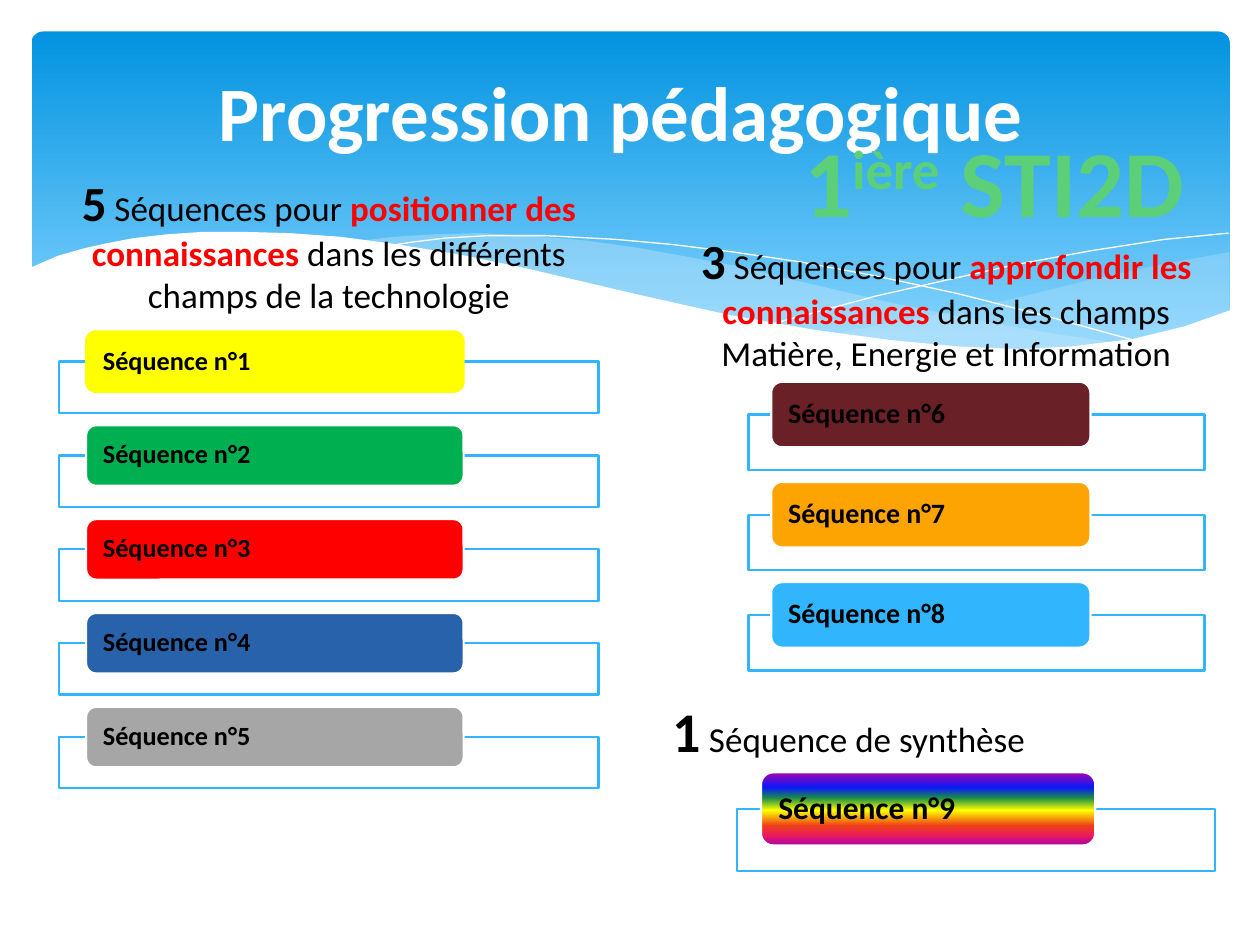
"""Build the teaching progression slide with its wave header and sequence lists."""
import lxml.etree
import pptx
import pptx.dml.color
import pptx.enum.shapes
import pptx.enum.text
import pptx.oxml.ns
import pptx.util

Inches, Pt, qn = pptx.util.Inches, pptx.util.Pt, pptx.oxml.ns.qn
Shapes = pptx.enum.shapes.MSO_SHAPE
Align, Anchor = pptx.enum.text.PP_ALIGN, pptx.enum.text.MSO_ANCHOR

BLACK, WHITE, RED, GREEN = "000000", "FFFFFF", "FF0000", "5BD078"
SKY, MIST = "31B6FD", "C6E7FC"
HEADER_STOPS = [(0, "0293E0"), (90, "83D3FE")]
RAINBOW_STOPS = [(0, "A603AB"), (21, "0819FB"), (35, "1A8D48"), (52, "FFFF00"),
                 (73, "EE3F17"), (88, "E81766"), (100, "A603AB")]
RIGHT_WAVE = [
    (9.76, 2), (9.21, 2.1), (8.61, 2.23), (8.05, 2.37), (7.53, 2.48), (6.61, 2.65), (7.05, 2.71),
    (7.45, 2.75), (7.81, 2.77), (8.14, 2.78), (8.54, 2.76), (8.97, 2.7), (9.35, 2.62), (9.76, 2.47)]
LONG_WAVE = [
    (8.93, 2.73), (8.37, 2.65), (7.75, 2.54), (7.06, 2.4), (6.29, 2.22), (5.84, 2.11), (5.41, 2.03),
    (5.02, 1.96), (4.65, 1.91), (4.2, 1.87), (3.8, 1.85), (3.44, 1.86), (3.13, 1.88), (2.86, 1.91),
    (3.23, 1.96), (3.62, 2.03), (4.04, 2.11), (4.49, 2.22), (5.3, 2.4), (6.01, 2.55), (6.5, 2.64),
    (6.95, 2.7), (7.36, 2.75), (7.73, 2.77), (8.07, 2.78), (8.38, 2.78), (8.67, 2.76)]
FALLING_LINE = [
    (3.09, 1.95), (3.28, 1.92), (3.53, 1.89), (3.87, 1.87), (4.33, 1.87), (4.89, 1.9), (5.33, 1.94),
    (5.82, 2), (6.36, 2.08), (6.95, 2.19), (7.6, 2.33), (8.31, 2.51), (9.07, 2.72)]
RISING_LINE = [
    (6.13, 2.57), (6.95, 2.35), (7.48, 2.23), (8.06, 2.1), (8.66, 1.99), (9.24, 1.9), (9.75, 1.85)]
WHITE_WAVE = [
    (9.77, 2.46), (9.4, 2.59), (8.99, 2.69), (8.5, 2.75), (8.09, 2.77), (7.61, 2.75), (7.08, 2.7),
    (6.48, 2.62), (5.79, 2.5), (5.03, 2.33), (4.18, 2.13), (3.65, 2.02), (3.16, 1.94), (2.71, 1.88),
    (2.3, 1.85), (1.93, 1.84), (1.61, 1.84), (1.32, 1.86), (1.06, 1.89), (0.85, 1.93), (0.67, 1.97),
    (0.46, 2.03), (0.23, 2.13), (0.23, 3.29), (9.77, 3.29)]


def color(value):
    """Turn a hex string into a colour."""
    return pptx.dml.color.RGBColor.from_string(value)


def fill_solid(shape, value, opacity=100):
    """Fill a shape with one colour at an opacity in percent."""
    shape.fill.solid()
    shape.fill.fore_color.rgb = color(value)
    element = shape._element.spPr.find(".//" + qn("a:srgbClr"))
    lxml.etree.SubElement(element, qn("a:alpha"), val=str(opacity * 1000))


def fill_gradient(shape, stops):
    """Fill a shape from top to bottom with (percent, colour) stops."""
    shape.fill.gradient()
    shape.fill.gradient_angle = 270
    stop_list = shape._element.spPr.find(".//" + qn("a:gsLst"))
    for child in list(stop_list):
        stop_list.remove(child)
    for percent, value in stops:
        stop = lxml.etree.SubElement(stop_list, qn("a:gs"), pos=str(percent * 1000))
        lxml.etree.SubElement(stop, qn("a:srgbClr"), val=value)


def set_line(shape, value, width):
    """Outline a shape with a colour and a width in points."""
    shape.line.color.rgb = color(value)
    shape.line.width = Pt(width)


def set_font(font, size, value, bold):
    """Set the typeface, size, colour and weight of a font."""
    font.name, font.size, font.bold = "Calibri", Pt(size), bold
    font.color.rgb = color(value)


def add_box(slide, kind, *bounds):
    """Add a preset shape without a shadow."""
    shape = slide.shapes.add_shape(kind, *map(Inches, bounds))
    shape.shadow.inherit = False
    return shape


def add_outline(slide, points, closed):
    """Add a freeform through points given in inches."""
    corners = [(Inches(x), Inches(y)) for x, y in points]
    builder = slide.shapes.build_freeform(*corners[0])
    builder.add_line_segments(corners[1:], close=closed)
    shape = builder.convert_to_shape()
    shape.shadow.inherit = False
    return shape


def add_wave(slide, points, value, opacity):
    """Add a filled wave without an outline."""
    wave = add_outline(slide, points, True)
    fill_solid(wave, value, opacity)
    wave.line.fill.background()


def add_header(slide):
    """Draw the gradient panel and its waves."""
    panel = add_box(slide, Shapes.ROUNDED_RECTANGLE, 0.25, 0.25, 9.51, 2.7)
    panel.adjustments[0] = 0.034
    fill_gradient(panel, HEADER_STOPS)
    panel.line.fill.background()
    add_wave(slide, RIGHT_WAVE, MIST, 29)
    add_wave(slide, LONG_WAVE, MIST, 40)
    for points in (FALLING_LINE, RISING_LINE):
        curve = add_outline(slide, points, False)
        curve.fill.background()
        set_line(curve, WHITE, 0)
    add_wave(slide, WHITE_WAVE, WHITE, 100)


def add_title(slide, text):
    """Format the slide title and bring it in front of the header."""
    title = slide.shapes.title
    slide.shapes._spTree.append(title._element)
    title.left, title.top, title.width, title.height = map(Inches, (0.5, 0.37, 9, 1.02))
    title.text_frame.text = text
    title.text_frame.vertical_anchor = Anchor.MIDDLE
    paragraph = title.text_frame.paragraphs[0]
    paragraph.alignment = Align.CENTER
    set_font(paragraph.font, 44, WHITE, True)


def add_text(slide, bounds, runs, alignment=Align.CENTER, wrap=True):
    """Add a text box from (text, size, colour, bold) runs and return its runs."""
    frame = slide.shapes.add_textbox(*map(Inches, bounds)).text_frame
    frame.word_wrap = wrap
    frame.auto_size = pptx.enum.text.MSO_AUTO_SIZE.SHAPE_TO_FIT_TEXT
    paragraph = frame.paragraphs[0]
    paragraph.alignment = alignment
    for text, *style in runs:
        run = paragraph.add_run()
        run.text = text
        set_font(run.font, *style)
    return paragraph.runs


def add_goal(slide, left, top, count, goal, scope):
    """Add a centred heading with its count and its goal in red."""
    add_text(slide, (left, top, 4.72, 1.25), [
        (count, 28, BLACK, True), (" Séquences pour ", 20, BLACK, False),
        (goal, 20, RED, True), (scope, 20, BLACK, False)])


def add_sequence(slide, number, left, top, width, height, size, stops, border=WHITE):
    """Add an outlined bar with a labelled tab over its upper edge."""
    bar = add_box(slide, Shapes.RECTANGLE, left, top + height / 2, width, 0.85 * height)
    fill_solid(bar, WHITE, 90)
    set_line(bar, SKY, 1.25)
    tab = add_box(slide, Shapes.ROUNDED_RECTANGLE, left + 0.05 * width, top, 0.7 * width, height)
    if isinstance(stops, str):
        fill_solid(tab, stops)
    else:
        fill_gradient(tab, stops)
    set_line(tab, border, 1.25)
    frame = tab.text_frame
    frame.text = f"Séquence n°{number}"
    frame.vertical_anchor = Anchor.MIDDLE
    frame.margin_left, frame.margin_top, frame.margin_bottom = Inches(0.11), 0, 0
    paragraph = frame.paragraphs[0]
    paragraph.alignment = Align.LEFT
    paragraph.line_spacing = 0.9
    set_font(paragraph.font, size, BLACK, True)


def main():
    """Build and save the slide."""
    presentation = pptx.Presentation()
    presentation.slide_width, presentation.slide_height = Inches(10), Inches(7.5)
    slide = presentation.slides.add_slide(presentation.slide_layouts[5])
    add_header(slide)
    add_title(slide, "Progression pédagogique ")
    add_goal(slide, 0.25, 1.32, "5", "positionner des connaissances ",
             "dans les différents champs de la technologie")
    for index, value in enumerate(("FFFF00", "00B050", RED, "2862AA", "A6A6A6")):
        add_sequence(slide, index + 1, 0.47, 2.63 + 0.745 * index, 4.28, 0.48, 15,
                     value, WHITE if index else value)
    add_goal(slide, 5.15, 1.78, "3", "approfondir les connaissances ",
             "dans les champs Matière, Energie et Information")
    for index, value in enumerate(("6A2027", "FEA402", SKY)):
        add_sequence(slide, index + 6, 5.94, 3.03 + 0.795 * index, 3.62, 0.52, 16, value)
    add_text(slide, (5.24, 5.48, 4.41, 0.64), [
        ("1", 32, BLACK, True), (" Séquence de synthèse", 20, BLACK, False)], Align.LEFT)
    add_sequence(slide, 9, 5.85, 6.13, 3.79, 0.58, 18, RAINBOW_STOPS)
    level = add_text(slide, (6.23, 0.93, 3.32, 1.01), [
        (text, 54, GREEN, True) for text in ("1", "ière", " STI2D")], wrap=False)
    level[1]._r.get_or_add_rPr().set("baseline", "30000")
    presentation.save("out.pptx")


if __name__ == "__main__":
    main()
